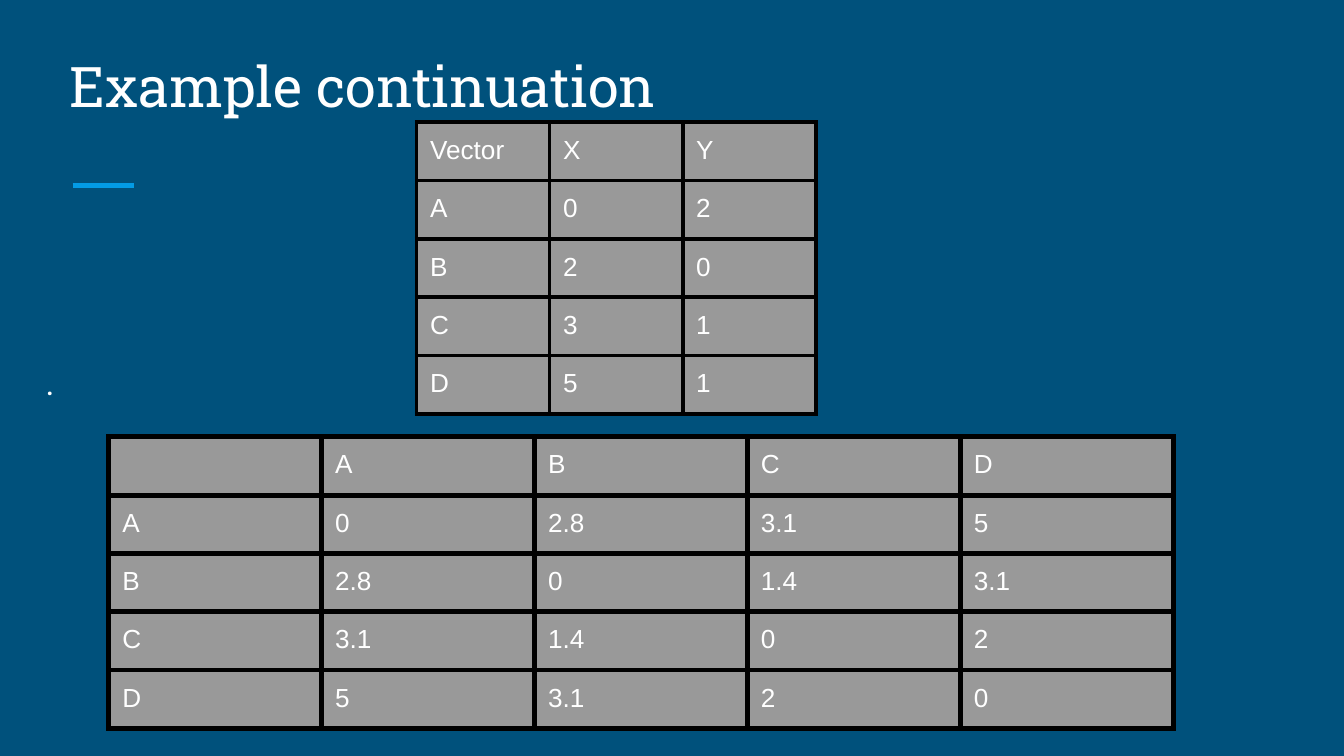
from lxml import etree
from pptx import Presentation
from pptx import util as u
from pptx.dml.color import RGBColor
from pptx.enum import shapes, text
from pptx.oxml import ns

COLORS = {
    "background": "00517C",
    "accent": "039BE5",
    "text": "FFFFFF",
    "cell": "999999",
    "border": "000000",
}
INSET = u.Inches(0.1)

VECTORS = [
    ["Vector", "X", "Y"],
    ["A", "0", "2"],
    ["B", "2", "0"],
    ["C", "3", "1"],
    ["D", "5", "1"],
]
DISTANCES = [
    ["", "A", "B", "C", "D"],
    ["A", "0", "2.8", "3.1", "5"],
    ["B", "2.8", "0", "1.4", "3.1"],
    ["C", "3.1", "1.4", "0", "2"],
    ["D", "5", "3.1", "2", "0"],
]


def rgb(name):
    return RGBColor.from_string(COLORS[name])


def style(font, name, size):
    font.name = name
    font.size = u.Pt(size)
    font.color.rgb = rgb("text")


def set_insets(box):
    box.margin_left = box.margin_right = INSET
    box.margin_top = box.margin_bottom = INSET


def add_text(slide, box, words, font_name, size, anchor, spacing=1.0):
    frame = slide.shapes.add_textbox(*map(u.Inches, box)).text_frame
    frame.word_wrap = True
    frame.vertical_anchor = anchor
    set_insets(frame)
    paragraph = frame.paragraphs[0]
    paragraph.text = words
    paragraph.line_spacing = spacing
    style(paragraph.font, font_name, size)


def add_accent(slide, left, top, width):
    rule = slide.shapes.add_connector(
        shapes.MSO_CONNECTOR.STRAIGHT,
        *map(u.Inches, (left, top, left + width, top)))
    rule.line.color.rgb = rgb("accent")
    rule.line.width = u.Pt(3)
    etree.SubElement(rule._element.spPr, ns.qn("a:effectLst"))


def add_borders(cell, width):
    """Draw all four sides; border elements must precede the cell fill."""
    properties = cell._tc.get_or_add_tcPr()
    for side in ("lnL", "lnR", "lnT", "lnB"):
        line = etree.SubElement(properties, ns.qn(f"a:{side}"), w=str(u.Pt(width)))
        fill = etree.SubElement(line, ns.qn("a:solidFill"))
        etree.SubElement(fill, ns.qn("a:srgbClr"), val=COLORS["border"])


def add_grid(slide, box, rows, border):
    """Add a bordered table with equal columns and rows filling the box."""
    left, top, width, height = map(u.Inches, box)
    table = slide.shapes.add_table(
        len(rows), len(rows[0]), left, top, width, height).table
    table.first_row = table.horz_banding = False
    for r, row in enumerate(rows):
        for c, value in enumerate(row):
            cell = table.cell(r, c)
            add_borders(cell, border)
            cell.fill.solid()
            cell.fill.fore_color.rgb = rgb("cell")
            if value:
                set_insets(cell)
                # Run fonts keep the row height to that of the cell's own font.
                run = cell.text_frame.paragraphs[0].add_run()
                run.text = value
                style(run.font, "Arial", 14)


def main():
    deck = Presentation()
    deck.slide_width = u.Inches(10)
    deck.slide_height = deck.slide_width * 9 // 16
    slide = deck.slides.add_slide(deck.slide_layouts[6])
    slide.background.fill.solid()
    slide.background.fill.fore_color.rgb = rgb("background")

    add_accent(slide, 0.54, 1.38, 0.46)
    add_text(slide, (0.42, 0.23, 9.15, 0.75), "Example continuation",
             "Roboto Slab", 30, text.MSO_ANCHOR.BOTTOM)
    add_text(slide, (0.24, 2.55, 9.15, 3.37), ".",
             "Roboto", 18, text.MSO_ANCHOR.TOP, spacing=1.15)
    add_grid(slide, (3.1, 0.91, 2.97, 2.17), VECTORS, border=2.25)
    add_grid(slide, (0.81, 3.25, 7.92, 2.08), DISTANCES, border=3)
    deck.save("out.pptx")


if __name__ == "__main__":
    main()
